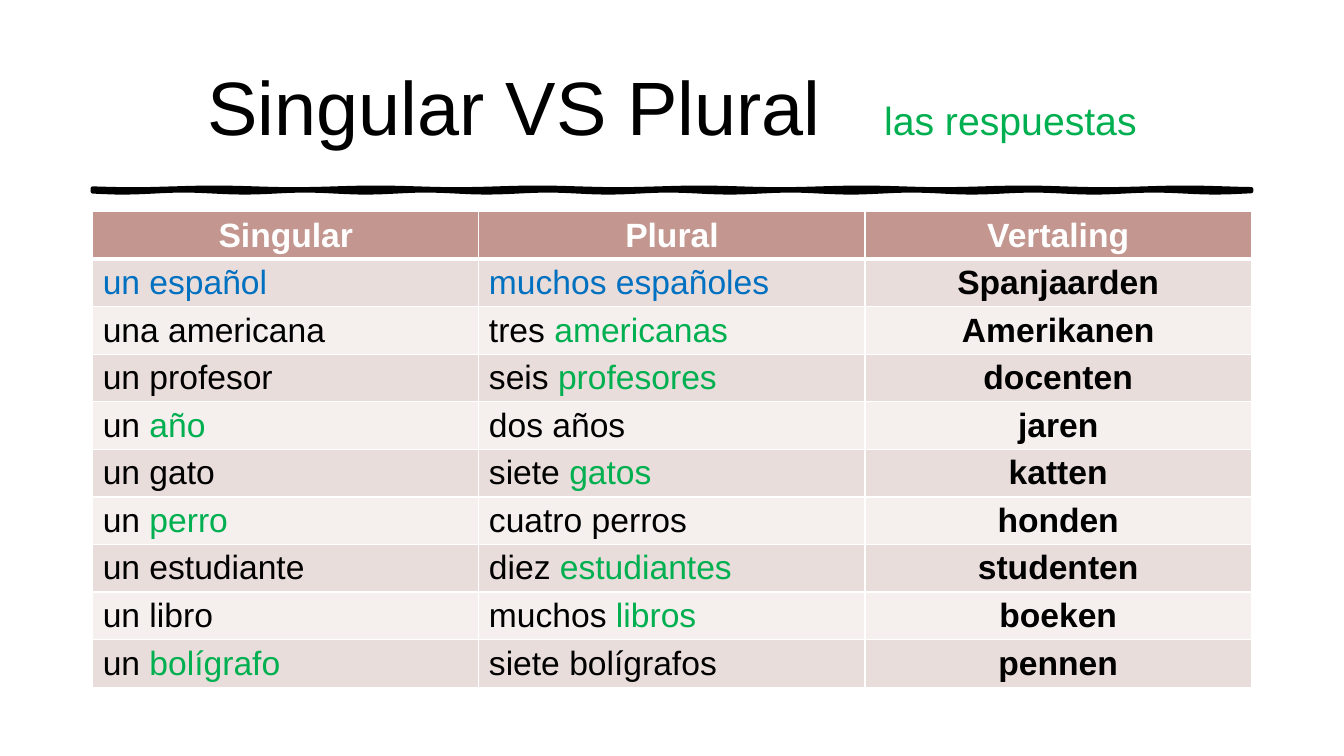
from math import sin

from lxml.etree import SubElement
from pptx import Presentation
from pptx.dml.color import RGBColor
from pptx.enum.text import MSO_ANCHOR as Anchor, MSO_AUTO_SIZE as AutoSize, PP_ALIGN as Align
from pptx.oxml import parse_xml
from pptx.oxml.ns import nsdecls, qn
from pptx.util import Inches, Pt

WIDTH, HEIGHT = Inches(13.33), Inches(7.5)
COLUMNS, ROWS = 29, 75
LEFT, SPAN = 2, 25
BLACK, WHITE, GREEN, BLUE = "000000", "FFFFFF", "00B050", "0070C0"
HEADER, BANDS = "C39790", ("F5EFEE", "E9DDDB")

WORDS = [
    ("Singular", "Plural", "Vertaling"),
    ("un español", "muchos españoles", "Spanjaarden"),
    ("una americana", "tres *americanas", "Amerikanen"),
    ("un profesor", "seis *profesores", "docenten"),
    ("un *año", "dos años", "jaren"),
    ("un gato", "siete *gatos", "katten"),
    ("un *perro", "cuatro perros", "honden"),
    ("un estudiante", "diez *estudiantes", "studenten"),
    ("un libro", "muchos *libros", "boeken"),
    ("un *bolígrafo", "siete bolígrafos", "pennen"),
]


def colour(code):
    """Turn a hex string into a colour."""
    return RGBColor.from_string(code)


def across(count):
    """Length of a number of grid columns."""
    return int(WIDTH * count / COLUMNS)


def down(count):
    """Length of a number of grid rows."""
    return int(HEIGHT * count / ROWS)


def write(para, text, size=24, ink=BLACK, bold=False, tracking=0):
    """Add a formatted span of text to a paragraph."""
    span = para.add_run()
    span.text = text
    span.font.name = "Arial"
    span.font.size = Pt(size)
    span.font.bold = bold
    span.font.color.rgb = colour(ink)
    if tracking:
        span.font._element.set("spc", str(tracking * 100))


class Sheet:
    """The slide in its style."""

    def __init__(self, deck):
        """Add a title-only page to the deck."""
        self.page = deck.slides.add_slide(deck.slide_layouts[5])

    def title(self, text, remark, top, height):
        """Place the title with a smaller remark after it."""
        box = self.page.shapes.title
        box.left, box.top = across(LEFT), down(top)
        box.width, box.height = across(SPAN), down(height)
        frame = box.text_frame
        frame.auto_size = AutoSize.NONE
        frame.word_wrap = True
        frame.vertical_anchor = Anchor.MIDDLE
        para = frame.paragraphs[0]
        para.alignment = Align.CENTER
        write(para, text, size=54)
        write(para, " ", size=54, tracking=30)
        write(para, remark, size=28, ink=GREEN)

    def brush_rule(self, top, thickness, steps=100):
        """Draw a wavering brush stroke across the page."""
        upper, lower = [], []
        for step in range(steps + 1):
            x = across(LEFT + SPAN * step / steps)
            upper.append((x, down(top + 0.08 * sin(step * 0.45))))
            lower.append((x, down(top + thickness + 0.1 * sin(step * 0.6))))
        outline = upper + lower[::-1]
        builder = self.page.shapes.build_freeform(*outline[0])
        builder.add_line_segments(outline[1:], close=True)
        stroke = builder.convert_to_shape()
        stroke.shadow.inherit = False
        stroke.fill.solid()
        stroke.fill.fore_color.rgb = colour(BLACK)
        stroke.line.color.rgb = colour(BLACK)
        stroke.line.width = Pt(3)
        SubElement(stroke.line._ln, qn("a:round"))

    def borders(self, cell, above, below):
        """Give a cell white borders."""
        properties = cell._tc.get_or_add_tcPr()
        widths = {"lnL": 1, "lnR": 1, "lnT": above, "lnB": below}
        for place, (side, width) in enumerate(widths.items()):
            properties.insert(place, parse_xml(
                f'<a:{side} {nsdecls("a")} w="{Pt(width)}"><a:solidFill>'
                f'<a:srgbClr val="{WHITE}"/></a:solidFill></a:{side}>'))

    def cell(self, cell, text, fill, ink, bold, align):
        """Fill a cell, with the part after a star in green."""
        cell.fill.solid()
        cell.fill.fore_color.rgb = colour(fill)
        cell.margin_top = cell.margin_bottom = Inches(0.04)
        cell.vertical_anchor = Anchor.MIDDLE
        para = cell.text_frame.paragraphs[0]
        para.alignment = align
        given, _, answer = text.partition("*")
        write(para, given, ink=ink, bold=bold)
        if answer:
            write(para, answer, ink=GREEN, bold=bold)

    def table(self, words, top, row_height):
        """Place the word table with its banded rows."""
        count = len(words[0])
        table = self.page.shapes.add_table(
            len(words), count, across(LEFT), down(top),
            across(SPAN), down(row_height * len(words))).table
        table.horz_banding = False
        for row, line in enumerate(words):
            table.rows[row].height = down(row_height)
            for column, text in enumerate(line):
                head, last = row == 0, column == count - 1
                ink = WHITE if head else BLUE if row == 1 and not last else BLACK
                cell = table.cell(row, column)
                self.cell(cell, text, HEADER if head else BANDS[row % 2], ink,
                          bold=head or last,
                          align=Align.CENTER if head or last else Align.LEFT)
                self.borders(cell, 3 if row == 1 else 1, 3 if head else 1)


def main():
    """Build and save the deck."""
    deck = Presentation()
    deck.slide_width, deck.slide_height = WIDTH, HEIGHT
    sheet = Sheet(deck)
    sheet.brush_rule(top=18.7, thickness=0.3)
    sheet.title("Singular VS Plural", "las respuestas", top=4, height=12.8)
    sheet.table(WORDS, top=21, row_height=4.72)
    deck.save("out.pptx")


if __name__ == "__main__":
    main()
